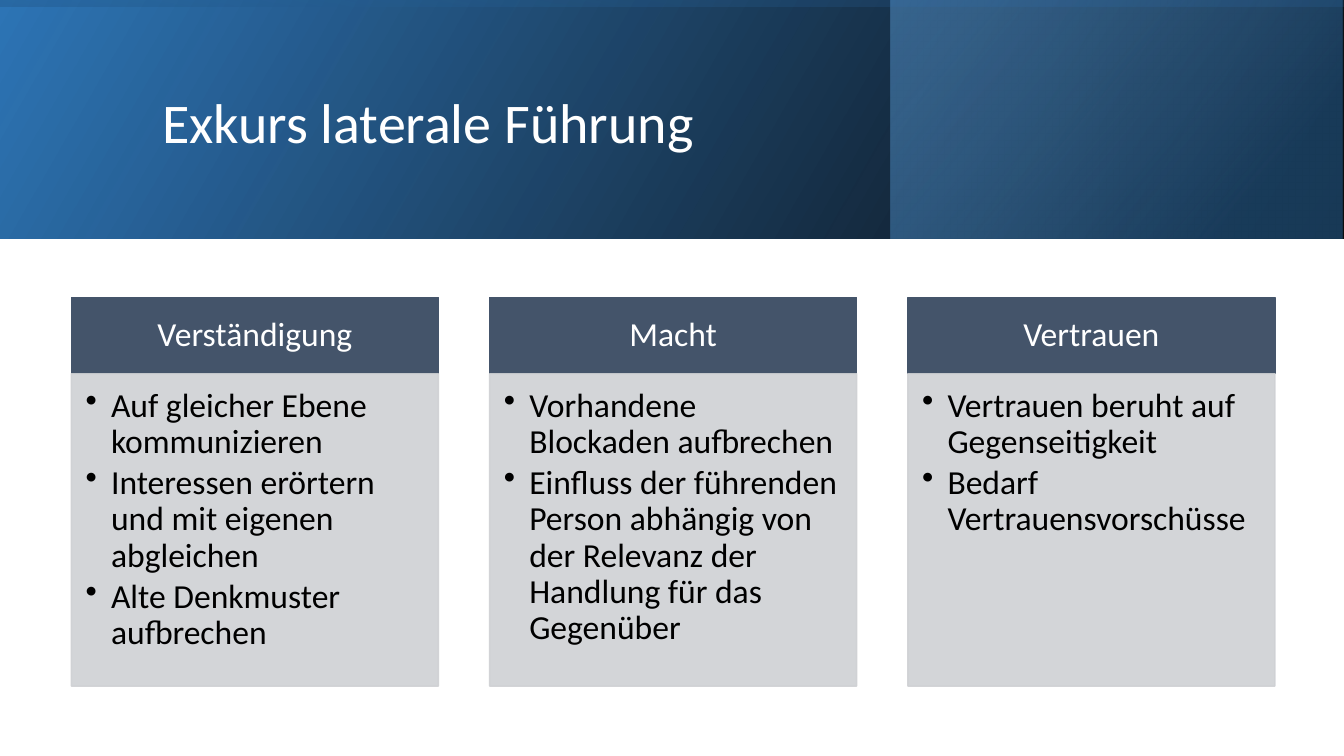
from pptx import Presentation
from pptx.dml.color import RGBColor
from pptx.enum import shapes, text
from pptx.oxml.ns import qn
from pptx.util import Cm, Pt
from lxml import etree

WHITE = RGBColor(0xFF, 0xFF, 0xFF)
BLACK = RGBColor(0x00, 0x00, 0x00)
BLUE = RGBColor(0x2E, 0x75, 0xB6)
NAVY = RGBColor(0x1F, 0x4E, 0x79)
SKY = RGBColor(0x5B, 0x9B, 0xD5)
SLATE = RGBColor(0x44, 0x54, 0x6A)
GREY = RGBColor(0xCF, 0xD1, 0xD4)

WIDE, HIGH, BAND = 33.87, 19.05, 6.02

deck = Presentation()
deck.slide_width, deck.slide_height = Cm(WIDE), Cm(HIGH)
slide = deck.slides.add_slide(deck.slide_layouts[6])


def box(*area):
    rect = slide.shapes.add_shape(shapes.MSO_SHAPE.RECTANGLE, *map(Cm, area))
    rect.shadow.inherit = False
    return rect


def write(shape, lines, size=24, color=WHITE, align=text.PP_ALIGN.LEFT,
          anchor=text.MSO_ANCHOR.MIDDLE, pads=(0.48, 0.28, 0.48, 0.28), bullet=False):
    frame = shape.text_frame
    frame.word_wrap = True
    frame.vertical_anchor = anchor
    (frame.margin_left, frame.margin_top,
     frame.margin_right, frame.margin_bottom) = map(Cm, pads)
    frame.text = "\n".join(lines)
    for para in frame.paragraphs:
        para.alignment = align
        para.line_spacing = 0.9
        para.font.size = Pt(size)
        para.font.name = "Calibri"
        para.font.color.rgb = color
        if bullet:
            para.space_after = Pt(3.6)
            props = para._p.get_or_add_pPr()
            props.set("marL", str(Cm(0.64)))
            props.set("indent", str(-Cm(0.64)))
            mark = etree.Element(qn("a:buChar"), char="•")
            props.find(qn("a:defRPr")).addprevious(mark)


bands = [
    ((0, 0, WIDE, BAND), 0, 30, [(0, BLACK, 96), (1, BLUE, 100)]),
    ((22.45, 0, 11.39, BAND), 0, 40, [(0.19, NAVY, 68), (1, SKY, 48)]),
    (((WIDE - BAND) / 2, (BAND - WIDE) / 2, BAND, WIDE), 270, 10,
     [(0.23, BLUE, 16), (0.99, BLACK, 45)]),
]
for area, turn, angle, stops in bands:
    band = box(*area)
    band.rotation = turn
    band._element.spPr.xfrm.set("flipH", "1")
    band.line.fill.background()
    band.fill.gradient()
    band.fill.gradient_angle = angle
    for stop, (place, color, alpha) in zip(band.fill.gradient_stops, stops):
        stop.position = place
        stop.color.rgb = color
    tints = band._element.spPr.iter(qn("a:srgbClr"))
    for tint, (place, color, alpha) in zip(tints, stops):
        etree.SubElement(tint, qn("a:alpha"), val=str(alpha * 1000))

title = slide.shapes.add_textbox(Cm(3.84), Cm(0.97), Cm(27), Cm(4.37))
write(title, ["Exkurs laterale Führung"], size=40, pads=(0.25, 0.13, 0.25, 0.13))

cards = [
    ("Verständigung", ["Auf gleicher Ebene kommunizieren",
                       "Interessen erörtern und mit eigenen abgleichen",
                       "Alte Denkmuster aufbrechen"]),
    ("Macht", ["Vorhandene Blockaden aufbrechen",
               "Einfluss der führenden Person abhängig von der Relevanz "
               "der Handlung für das Gegenüber"]),
    ("Vertrauen", ["Vertrauen beruht auf Gegenseitigkeit",
                   "Bedarf Vertrauensvorschüsse"]),
]
for col, (name, points) in enumerate(cards):
    left = 1.8 + col * 10.54
    head = box(left, 7.49, 9.25, 1.93)
    body = box(left, 9.42, 9.25, 7.87)
    for part, color in ((head, SLATE), (body, GREY)):
        part.fill.solid()
        part.fill.fore_color.rgb = color
        part.line.color.rgb = color
        part.line.width = Pt(1)
    for tint in body._element.spPr.iter(qn("a:srgbClr")):
        etree.SubElement(tint, qn("a:alpha"), val="90000")
    write(head, [name], align=text.PP_ALIGN.CENTER)
    write(body, points, color=BLACK, anchor=text.MSO_ANCHOR.TOP,
          pads=(0.36, 0.36, 0.48, 0.53), bullet=True)

deck.save("out.pptx")
